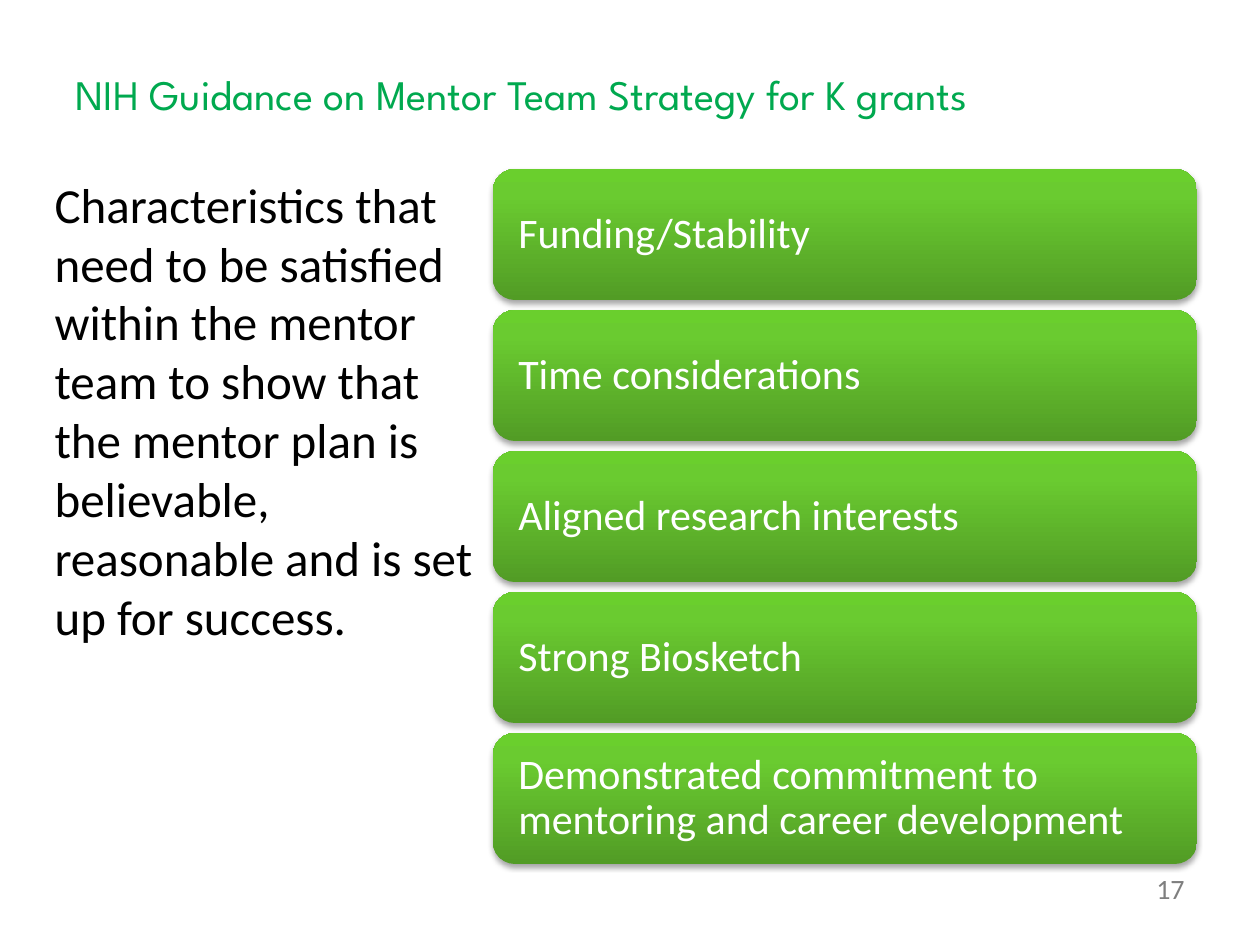
from lxml.etree import SubElement as Sub
from pptx import Presentation as Deck
from pptx.dml.color import RGBColor as Rgb
from pptx.enum.shapes import MSO_SHAPE as Kind
from pptx.enum.text import MSO_ANCHOR as Anchor, MSO_AUTO_SIZE as Fit, PP_ALIGN as Align
from pptx.oxml import parse_xml
from pptx.oxml.ns import nsdecls, qn
from pptx.util import Emu, Pt

SCALE = 914400 / 126  # EMU in one px
HUES = {"title": "00A94F", "body": "000000", "card": "FFFFFF", "page": "7F7F7F",
        "deep": "529C25", "mid": "6ACB30", "top": "6ACF2D", "shade": "000000"}
STOPS = [(0, "deep"), (80, "mid"), (100, "top")]
CARDS = ["Funding/Stability", "Time considerations", "Aligned research interests",
         "Strong Biosketch", "Demonstrated commitment to mentoring and career development"]


def px(num):
    return Emu(round(num * SCALE))


class Maker:
    """Holds the style and the current slide."""

    fonts = {
        "title": {"name": "League Spartan", "size": Pt(24)},
        "body": {"name": "Calibri", "size": Pt(28)},
        "card": {"name": "Calibri", "size": Pt(24)},
        "page": {"name": "Calibri", "size": Pt(16)},
    }
    paras = {
        "title": {"alignment": Align.LEFT, "line_spacing": 0.9},
        "body": {"alignment": Align.LEFT, "space_before": Pt(5.6)},
        "card": {"alignment": Align.LEFT, "line_spacing": 0.9},
        "page": {"alignment": Align.RIGHT},
    }
    frames = {
        "title": {"vertical_anchor": Anchor.BOTTOM},
        "body": {"vertical_anchor": Anchor.TOP},
        "card": {"vertical_anchor": Anchor.MIDDLE,
                 "margin_left": px(19), "margin_right": px(19)},
        "page": {"vertical_anchor": Anchor.MIDDLE},
    }

    def __init__(self, deck):
        self.slide = deck.slides.add_slide(deck.slide_layouts[1])
        self.shapes = self.slide.shapes

    def label(self, shape, text, role):
        frame = shape.text_frame
        frame.text = text
        para = frame.paragraphs[0]
        font = para.runs[0].font
        base = {"word_wrap": True, "auto_size": Fit.NONE}
        for item, vals in ((frame, base | self.frames[role]),
                           (para, self.paras[role]), (font, self.fonts[role])):
            for key, val in vals.items():
                setattr(item, key, val)
        font.color.rgb = Rgb.from_string(HUES[role])
        return para

    def place(self, shape, box):
        for key, val in zip(("left", "top", "width", "height"), box):
            setattr(shape, key, px(val))

    def title(self, text, box):
        self.place(self.shapes.title, box)
        self.label(self.shapes.title, text, "title")

    def body(self, text, box):
        shape = self.slide.placeholders[1]
        self.place(shape, box)
        para = self.label(shape, text, "body")
        # No bullet and no hanging indent
        props = para._p.get_or_add_pPr()
        props.set("marL", "0")
        props.set("indent", "0")
        Sub(props, qn("a:buNone"))

    def page(self, text, box):
        self.label(self.shapes.add_textbox(*map(px, box)), text, "page")

    def card(self, text, box):
        shape = self.shapes.add_shape(Kind.ROUNDED_RECTANGLE, *map(px, box))
        shape.line.fill.background()
        shape.shadow.inherit = False
        self.paint(shape._element.spPr)
        self.label(shape, text, "card")

    def paint(self, props):
        # Three-stop gradient, running upwards
        stops = "".join(f'<a:gs pos="{pos * 1000}"><a:srgbClr val="{HUES[hue]}"/></a:gs>'
                        for pos, hue in STOPS)
        grad = parse_xml(f'<a:gradFill {nsdecls("a")} rotWithShape="1"><a:gsLst>{stops}'
                         '</a:gsLst><a:lin ang="16200000" scaled="0"/></a:gradFill>')
        props.find(qn("a:ln")).addprevious(grad)
        # Soft shadow below
        cast = Sub(props.find(qn("a:effectLst")), qn("a:outerShdw"), blurRad="40000",
                   dist="23000", dir="5400000", rotWithShape="0")
        hue = Sub(cast, qn("a:srgbClr"), val=HUES["shade"])
        Sub(hue, qn("a:alpha"), val="35000")


def main():
    deck = Deck()
    deck.slide_width, deck.slide_height = px(1260), px(945)
    make = Maker(deck)

    # Title and lead text
    make.title("NIH Guidance on Mentor Team Strategy for K grants", (63, 38, 1134, 88))
    make.body("Characteristics that need to be satisfied within the mentor team to show "
              "that the mentor plan is believable, reasonable and is set up for success.",
              (42, 168, 451, 693))

    # Stack of cards
    for row, text in enumerate(CARDS):
        make.card(text, (493, 169 + 141 * row, 704, 131))

    # Page number
    make.page("17", (1092, 863, 105, 50))
    deck.save("out.pptx")


if __name__ == "__main__":
    main()
